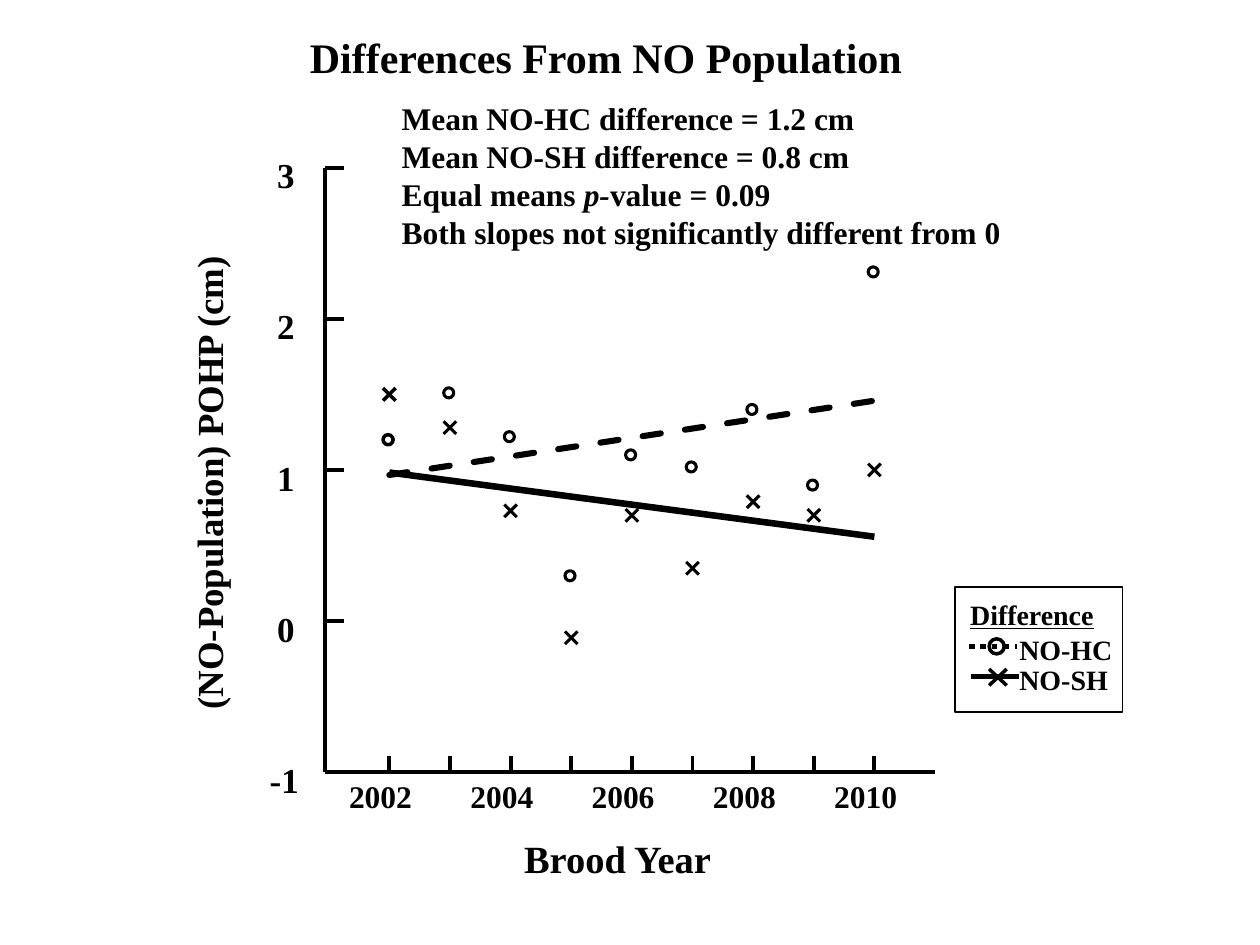
from lxml import etree
from pptx import Presentation
from pptx.dml.color import RGBColor
from pptx.enum.dml import MSO_LINE
from pptx.enum.shapes import MSO_CONNECTOR, MSO_SHAPE
from pptx.enum.text import MSO_AUTO_SIZE
from pptx.oxml.ns import qn
from pptx.util import Inches, Pt

STRAIGHT = MSO_CONNECTOR.STRAIGHT
OVAL, BOX = MSO_SHAPE.OVAL, MSO_SHAPE.RECTANGLE
DASH, DOT = MSO_LINE.DASH, MSO_LINE.ROUND_DOT
INK = "000000"
AXIS_X, AXIS_BOTTOM, AXIS_TOP, AXIS_RIGHT = 2.58, 6.13, 1.33, 7.42
FIRST_X, YEAR_STEP = 3.09, 3.85 / 8
ZERO_Y, UNIT = 4.93, 1.2
TICK = 0.15

prs = Presentation()
prs.slide_width, prs.slide_height = Inches(10), Inches(7.5)
slide = prs.slides.add_slide(prs.slide_layouts[6])
shapes = slide.shapes


def color(hex_text):
    return RGBColor.from_string(hex_text)


def add_text(paragraphs, left, top, width, height, size, wrap=False,
             underline=False, rotation=0, inset=(0, 0)):
    """Each paragraph is a list of (text, italic) runs."""
    box = shapes.add_textbox(Inches(left), Inches(top), Inches(width), Inches(height))
    box.rotation = rotation
    frame = box.text_frame
    frame.word_wrap = wrap
    frame.auto_size = MSO_AUTO_SIZE.NONE
    frame.margin_left = frame.margin_right = Inches(inset[0])
    frame.margin_top = frame.margin_bottom = Inches(inset[1])
    for index, runs in enumerate(paragraphs):
        para = frame.paragraphs[0] if index == 0 else frame.add_paragraph()
        for text, italic in runs:
            run = para.add_run()
            run.text = text
            font = run.font
            font.name, font.size, font.bold = "Times New Roman", Pt(size), True
            font.italic, font.underline = italic, underline
            font.color.rgb = color(INK)


def add_outline(x1, y1, x2, y2, weight, dash=None, preset=None):
    """A line between two points, or an unfilled preset shape spanning them."""
    if preset is None:
        item = shapes.add_connector(STRAIGHT, Inches(x1), Inches(y1), Inches(x2), Inches(y2))
    else:
        item = shapes.add_shape(preset, Inches(x1), Inches(y1), Inches(x2 - x1), Inches(y2 - y1))
        item.shadow.inherit = False
        item.fill.background()
    item.line.color.rgb = color(INK)
    item.line.width = Pt(weight)
    if dash is not None:
        item.line.dash_style = dash
    if preset is None:
        etree.SubElement(item._element.spPr, qn("a:effectLst"))
    return item


# Title
add_text([[("Differences From NO Population", False)]], 2.46, 0.25, 4.74, 0.4, 24)

# Year axis
add_outline(AXIS_X, AXIS_BOTTOM, AXIS_RIGHT, AXIS_BOTTOM, 2.25)
for year in range(2002, 2011):
    x = FIRST_X + (year - 2002) * YEAR_STEP
    add_outline(x, AXIS_BOTTOM, x, AXIS_BOTTOM - 0.13, 2.25)
    if year % 2 == 0:
        add_text([[(str(year), False)]], x - 0.32, 6.17, 0.72, 0.43, 18)
add_text([[("Brood Year", False)]], 4.16, 6.63, 1.64, 0.37, 22, wrap=True)

# Difference axis
add_outline(AXIS_X, AXIS_BOTTOM, AXIS_X, AXIS_TOP, 2.25)
for value in range(-1, 4):
    y = ZERO_Y - value * UNIT
    add_outline(AXIS_X, y, AXIS_X + TICK, y, 2.25)
    left, width = (2.14, 0.33) if value < 0 else (2.2, 0.2)
    add_text([[(str(value), False)]], left, y - 0.11, width, 0.48, 20)
add_text([[("(NO-Population) POHP (cm)", False)]], -0.23, 3.57, 3.77, 0.35, 21,
         wrap=True, rotation=270)

# Observed differences, 2002 to 2010
no_hc = [1.2, 1.51, 1.22, 0.3, 1.1, 1.02, 1.4, 0.9, 2.31]
no_sh = [1.5, 1.28, 0.73, -0.11, 0.7, 0.35, 0.79, 0.7, 1.0]
for index, (hc, sh) in enumerate(zip(no_hc, no_sh)):
    x = FIRST_X + index * YEAR_STEP
    weight = 2 if index == 0 else 1.75
    hc_y, sh_y = ZERO_Y - hc * UNIT, ZERO_Y - sh * UNIT
    add_outline(x - 0.05, hc_y - 0.04, x + 0.03, hc_y + 0.04, weight, preset=OVAL)
    for rise in (0.05, -0.05):
        add_outline(x - 0.05, sh_y - rise, x + 0.05, sh_y + rise, weight)

# Trend lines
last_x = FIRST_X + 8 * YEAR_STEP
hc_trend = add_outline(FIRST_X, 3.77, last_x, 3.18, 3.5, DASH)
hc_trend.line._get_or_add_ln().set("cap", "rnd")
add_outline(FIRST_X, 3.75, last_x, 4.26, 3.75)

# Legend
add_outline(7.58, 4.66, 8.91, 5.65, 1, preset=BOX)
add_text([[("Difference", False)]], 7.7, 4.74, 1, 0.27, 16, underline=True)
add_text([[("NO-HC", False)]], 8.09, 5.02, 0.74, 0.27, 16)
add_outline(7.85, 5.07, 7.97, 5.19, 2, preset=OVAL)
add_outline(7.69, 5.13, 8.07, 5.13, 3.25, DOT)
add_text([[("NO-SH", False)]], 8.09, 5.26, 0.71, 0.27, 16)
for start_y, end_y in ((5.31, 5.44), (5.44, 5.31)):
    add_outline(7.85, start_y, 7.99, end_y, 2)
add_outline(7.71, 5.37, 8.09, 5.37, 3.25)

# Summary of the comparison
add_text([
    [("Mean NO-HC difference = 1.2 cm", False)],
    [("Mean NO-SH difference = 0.8 cm", False)],
    [("Equal means ", False), ("p-", True), ("value = 0.09", False)],
    [("Both slopes not significantly different from 0", False)],
], 3.09, 0.74, 5, 1.31, 18, wrap=True, inset=(0.1, 0.05))

prs.save("out.pptx")
